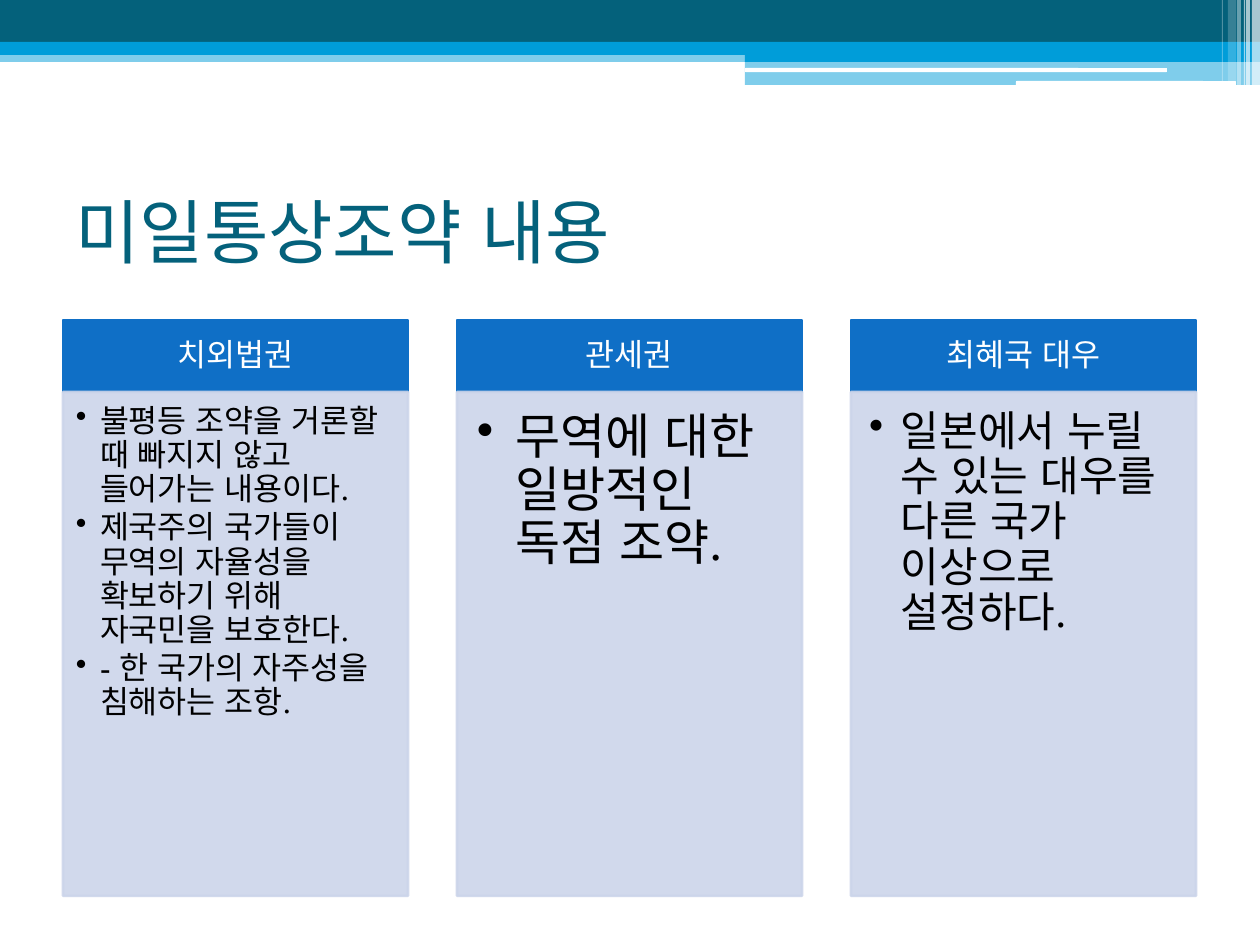
from lxml import etree
from pptx import Presentation
from pptx.dml.color import RGBColor
from pptx.enum.lang import MSO_LANGUAGE_ID
from pptx.enum.shapes import MSO_SHAPE
from pptx.enum.text import MSO_ANCHOR, PP_ALIGN
from pptx.oxml.ns import qn
from pptx.util import Pt

RECT, ROUND = MSO_SHAPE.RECTANGLE, MSO_SHAPE.ROUNDED_RECTANGLE
TOP, MIDDLE = MSO_ANCHOR.TOP, MSO_ANCHOR.MIDDLE
LEFT, CENTER = PP_ALIGN.LEFT, PP_ALIGN.CENTER
KOREAN = MSO_LANGUAGE_ID.KOREAN
PX = 914400 // 126
THEME = {
    "teal": "04617B", "sky": "009DD9", "white": "FFFFFF", "black": "000000",
    "header": "0F6FC6", "body": "CCD5EA",
    "title_font": "Karla", "text_font": "TeX Gyre Schola",
    "title_size": 40, "header_size": 18, "line_width": 1.5,
}


def add_box(slide, kind, box, color, alpha=100, outlined=False):
    sp = slide.shapes.add_shape(kind, *[v * PX for v in box])
    sp.shadow.inherit = False
    fills = [sp.fill]
    if outlined:
        sp.line.width = Pt(THEME["line_width"])
        fills.append(sp.line.fill)
    else:
        sp.line.fill.background()
    for fill in fills:
        fill.solid()
        fill.fore_color.rgb = RGBColor.from_string(THEME[color])
    if alpha < 100:
        for clr in sp._element.spPr.iter(qn("a:srgbClr")):
            etree.SubElement(clr, qn("a:alpha"), val=str(alpha * 1000))
    return sp


def write_text(sp, texts, font, size, color, frame, para, indent=0):
    tf = sp.text_frame
    for name, value in {"word_wrap": True, **frame}.items():
        setattr(tf, name, value)
    for i, text in enumerate(texts):
        p = tf.paragraphs[0] if i == 0 else tf.add_paragraph()
        for name, value in para.items():
            setattr(p, name, value)
        if indent:
            pPr = p._p.get_or_add_pPr()
            pPr.set("marL", str(indent * PX))
            pPr.set("indent", str(-indent * PX))
            etree.SubElement(pPr, qn("a:buChar"), char="•")
        r = p.add_run()
        r.text = text
        style = {"name": THEME[font], "size": Pt(size), "language_id": KOREAN}
        for name, value in style.items():
            setattr(r.font, name, value)
        r.font.color.rgb = RGBColor.from_string(THEME[color])


prs = Presentation()
prs.slide_width, prs.slide_height = 1260 * PX, 945 * PX
s = prs.slides.add_slide(prs.slide_layouts[5])

bands = [
    (RECT, (0, 50, 1260, 12), "sky", 50),
    (RECT, (0, 0, 1260, 43), "teal", 100),
    (RECT, (0, 42, 1260, 13), "sky", 100),
    (RECT, (745, 49, 515, 13), "sky", 100),
    (RECT, (745, 61, 515, 24), "sky", 50),
    (ROUND, (745, 68, 422, 4), "white", 100),
    (ROUND, (1016, 81, 220, 5), "white", 100),
]
stripes = [
    (1252, 8, 85, 65), (1246, 4, 85, 65), (1244, 1, 85, 60),
    (1237, 4, 85, 40), (1228, 8, 81, 20), (1222, 1, 81, 30),
]
for kind, box, color, alpha in bands:
    add_box(s, kind, box, color, alpha)
for left, width, height, alpha in stripes:
    add_box(s, RECT, (left, 0, width, height), "white", alpha)

title = s.shapes.title
place = {"left": 63, "top": 157, "width": 1134, "height": 148}
for name, value in place.items():
    setattr(title, name, value * PX)
write_text(title, ["미일통상조약 내용"], "title_font", THEME["title_size"], "teal",
           {"vertical_anchor": MIDDLE}, {"alignment": LEFT})

SIDES = ("margin_left", "margin_top", "margin_right", "margin_bottom")
HEADER_INSETS = (18, 10, 18, 10)
cards = [
    ("치외법권", 18, 24, (13, 13, 18, 20), [
        "불평등 조약을 거론할 때 빠지지 않고 들어가는 내용이다.",
        "제국주의 국가들이 무역의 자율성을 확보하기 위해 자국민을 보호한다.",
        "- 한 국가의 자주성을 침해하는 조항.",
    ]),
    ("관세권", 28, 39, (20, 20, 28, 30), ["무역에 대한 일방적인 독점 조약."]),
    ("최혜국 대우", 24, 32, (18, 18, 24, 26),
     ["일본에서 누릴 수 있는 대우를 다른 국가 이상으로 설정하다."]),
]
CARD_LEFT, CARD_STEP, CARD_WIDTH = 63, 394, 345
for i, (heading, size, indent, insets, points) in enumerate(cards):
    left = CARD_LEFT + i * CARD_STEP
    head = add_box(s, RECT, (left, 320, CARD_WIDTH, 72), "header", outlined=True)
    frame = {side: v * PX for side, v in zip(SIDES, HEADER_INSETS)}
    write_text(head, [heading], "text_font", THEME["header_size"], "white",
               {"vertical_anchor": MIDDLE, **frame},
               {"alignment": CENTER, "line_spacing": 0.9})
    body = add_box(s, RECT, (left, 392, CARD_WIDTH, 504), "body", 90, True)
    frame = {side: v * PX for side, v in zip(SIDES, insets)}
    write_text(body, points, "text_font", size, "black",
               {"vertical_anchor": TOP, **frame},
               {"alignment": LEFT, "line_spacing": 0.9, "space_after": Pt(size * 0.15)},
               indent)

prs.save("out.pptx")
